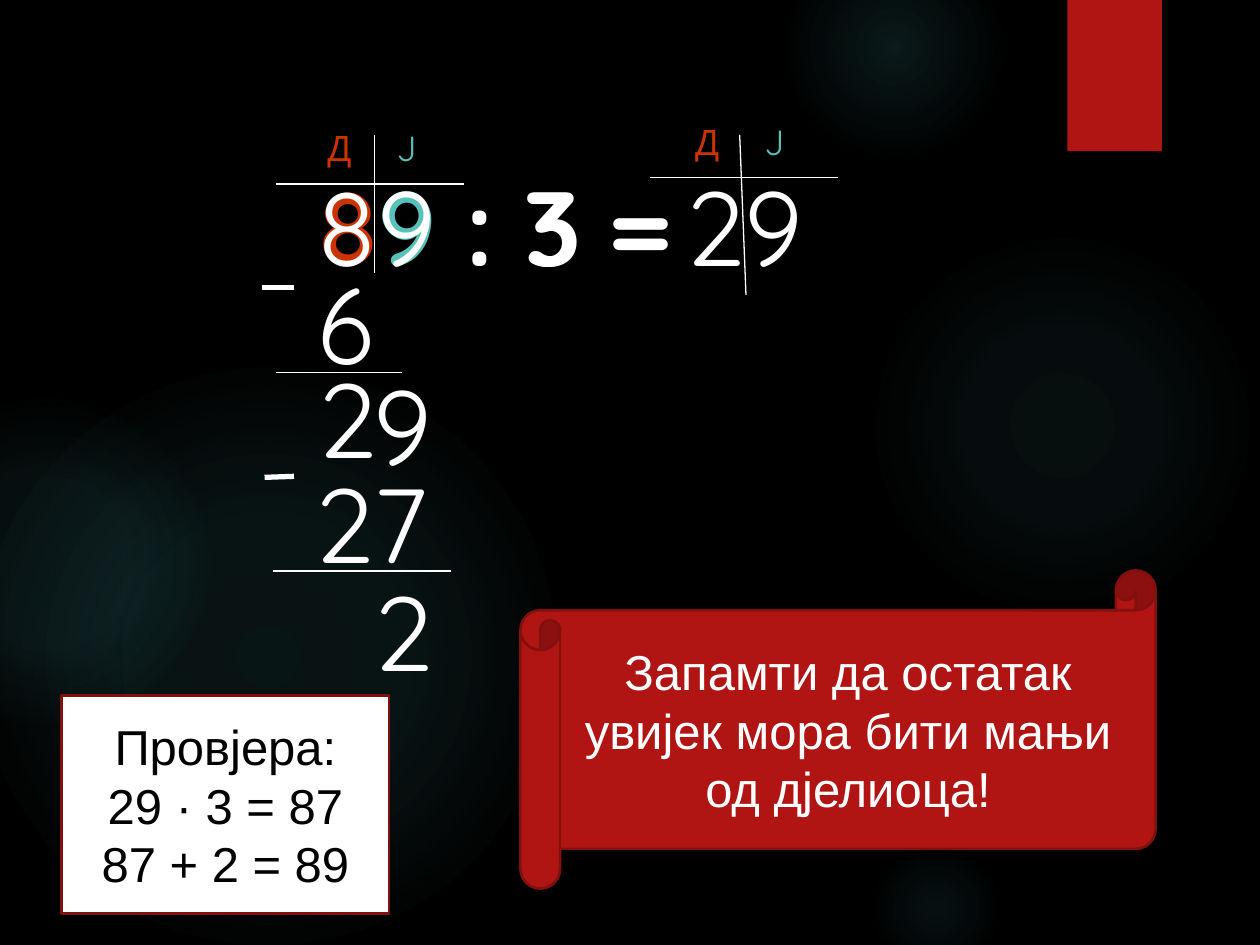
from collections import namedtuple
from dataclasses import dataclass

from lxml.etree import SubElement
from pptx import Presentation
from pptx.dml.color import RGBColor
from pptx.enum.shapes import MSO_CONNECTOR, MSO_SHAPE
from pptx.enum.text import MSO_ANCHOR, MSO_AUTO_SIZE, PP_ALIGN
from pptx.oxml.ns import qn
from pptx.util import Pt

Box = namedtuple("Box", "left top width height")


@dataclass(frozen=True)
class Theme:
    background: str = "000000"
    white: str = "FFFFFF"
    black: str = "000000"
    red: str = "B01513"
    dark_red: str = "82100E"
    tens: str = "CC3300"
    units: str = "58C1BA"
    glow: str = "50B9C1"
    digit_font: str = "Quicksand"
    note_font: str = "Arial"
    digit_size: int = 60
    label_size: int = 20
    note_size: int = 28
    thin: float = 0.75
    thick: float = 3
    border: float = 1.5


THEME = Theme()
DIGIT_WIDTH, DIGIT_HEIGHT = 47.5, 80


def apply_format(target, values):
    for name, value in values.items():
        setattr(target, name, value)


def style_font(font, color, size, name, bold=False):
    apply_format(font, {"name": name, "size": Pt(size), "bold": bold})
    font.color.rgb = RGBColor.from_string(color)


def add_shape(slide, kind, box, fill=None, line=None):
    shape = slide.shapes.add_shape(kind, *map(Pt, box))
    shape.shadow.inherit = False
    if fill:
        shape.fill.solid()
        shape.fill.fore_color.rgb = RGBColor.from_string(fill)
    if line:
        shape.line.color.rgb = RGBColor.from_string(line)
        shape.line.width = Pt(THEME.border)
    else:
        shape.line.fill.background()
    return shape


def add_text(slide, box, runs, size, bold=False):
    frame = slide.shapes.add_textbox(*map(Pt, box)).text_frame
    apply_format(frame, {"word_wrap": True, "auto_size": MSO_AUTO_SIZE.SHAPE_TO_FIT_TEXT})
    for text, color in runs:
        run = frame.paragraphs[0].add_run()
        run.text = text
        style_font(run.font, color, size, THEME.digit_font, bold)


def add_digit(slide, left, top, digit, bold=False):
    box = Box(left, top, DIGIT_WIDTH, DIGIT_HEIGHT)
    add_text(slide, box, [(digit, THEME.white)], THEME.digit_size, bold)


def add_line(slide, box, start, end, width):
    points = (box.left + start[0], box.top + start[1], box.left + end[0], box.top + end[1])
    connector = slide.shapes.add_connector(MSO_CONNECTOR.STRAIGHT, *map(Pt, points))
    connector.line.color.rgb = RGBColor.from_string(THEME.white)
    connector.line.width = Pt(width)
    SubElement(connector._element.spPr, qn("a:effectLst"))


def add_glow(slide, box, stops):
    shape = add_shape(slide, MSO_SHAPE.OVAL, box)
    shape.fill.gradient()
    gradient = shape._element.spPr.find(qn("a:gradFill"))
    for child in list(gradient):
        gradient.remove(child)
    stop_list = SubElement(gradient, qn("a:gsLst"))
    for position, opacity in stops:
        stop = SubElement(stop_list, qn("a:gs"), pos=str(position * 1000))
        color = SubElement(stop, qn("a:srgbClr"), val=THEME.glow)
        SubElement(color, qn("a:alpha"), val=str(opacity * 1000))
    path = SubElement(gradient, qn("a:path"), path="circle")
    SubElement(path, qn("a:fillToRect"), dict.fromkeys("ltrb", "50000"))


def add_backdrop(slide, box):
    slide.background.fill.solid()
    slide.background.fill.fore_color.rgb = RGBColor.from_string(THEME.background)
    glows = [
        (496, 132, 222, 7, 6, 69),
        (448, -36, 126, 14, 7, 73),
        (496, 480, 78, 9, 5, 66),
        (-12, 210, 330, 11, 10, 75),
        (-66, 228, 186, 8, 8, 72),
    ]
    for left, top, size, center, middle, edge in glows:
        glow_box = Box(box.left + left, box.top + top, size, size)
        add_glow(slide, glow_box, [(0, center), (36, middle), (edge, 0)])
    tab = Box(box.left + 610, box.top, 54, 86.4)
    add_shape(slide, MSO_SHAPE.RECTANGLE, tab, THEME.red)


def add_place_labels(slide, left, top):
    labels = [("Д", THEME.tens, 0, 28), ("J", THEME.units, 39.6, 24.5)]
    for text, color, offset, width in labels:
        add_text(slide, Box(left + offset, top, width, 31.7), [(text, color)], THEME.label_size)


def add_long_division(slide, box):
    equation = Box(box.left + 24.2, box.top + 19.5, 219.6, DIGIT_HEIGHT)
    runs = [("8", THEME.tens), ("9", THEME.units), (" : 3 =", THEME.white)]
    add_text(slide, equation, runs, THEME.digit_size, bold=True)
    add_place_labels(slide, box.left + 30, box.top)
    digits = [
        ("8", 24.2, 19.5), ("9", 58.8, 19.5),
        ("6", 24.2, 75.7),
        ("2", 24.2, 129.7), ("9", 56.6, 133.3),
        ("2", 22.8, 189.5), ("7", 56.6, 189.5),
        ("2", 56.6, 251.4),
    ]
    for digit, left, top in digits:
        add_digit(slide, box.left + left, box.top + top, digit)
    add_digit(slide, box.left + 143.8, box.top + 19.5, "3", bold=True)
    rules = [
        ((7.5, 36.2), (115, 36.2), THEME.thin),
        ((64, 8), (64, 87.2), THEME.thin),
        ((7.5, 144), (79.5, 144), THEME.thin),
        ((5.8, 257.3), (108, 257.3), THEME.thin),
        ((-0.5, 95.2), (18, 95.2), THEME.thick),
        ((1.2, 203.8), (18, 203.2), THEME.thick),
    ]
    for start, end, width in rules:
        add_line(slide, box, start, end, width)


def add_quotient(slide, box):
    for digit, left in (("2", 13), ("9", 46.8)):
        add_digit(slide, box.left + left, box.top + 23.1, digit)
    add_line(slide, box, (0, 36), (box.width, 36), THEME.thin)
    add_line(slide, box, (51.2, 11.6), (54.8, box.height), THEME.thin)
    add_place_labels(slide, box.left + 18.7, box.top)


def add_note(slide, box, kind, fill, color, lines):
    frame = add_shape(slide, kind, box, fill, THEME.dark_red).text_frame
    apply_format(frame, {"word_wrap": True, "vertical_anchor": MSO_ANCHOR.MIDDLE})
    frame.text = "\n".join(lines)
    for paragraph in frame.paragraphs:
        paragraph.alignment = PP_ALIGN.CENTER
        style_font(paragraph.runs[0].font, color, THEME.note_size, THEME.note_font)


def main():
    presentation = Presentation()
    apply_format(presentation, {"slide_width": Pt(720), "slide_height": Pt(540)})
    slide = presentation.slides.add_slide(presentation.slide_layouts[6])
    add_backdrop(slide, Box(0, 0, 720, 540))
    add_long_division(slide, Box(150, 69, 244, 332))
    add_quotient(slide, Box(371.5, 65.5, 107.5, 103))
    add_note(slide, Box(297.4, 326, 363, 181.8), MSO_SHAPE.HORIZONTAL_SCROLL, THEME.red,
             THEME.white, ["Запамти да остатак увијек мора бити мањи од дјелиоца!"])
    add_note(slide, Box(35.3, 397.4, 187, 124.6), MSO_SHAPE.RECTANGLE, THEME.white,
             THEME.black, ["Провјера:", "29 · 3 = 87", "87 + 2 = 89"])
    presentation.save("out.pptx")


if __name__ == "__main__":
    main()
